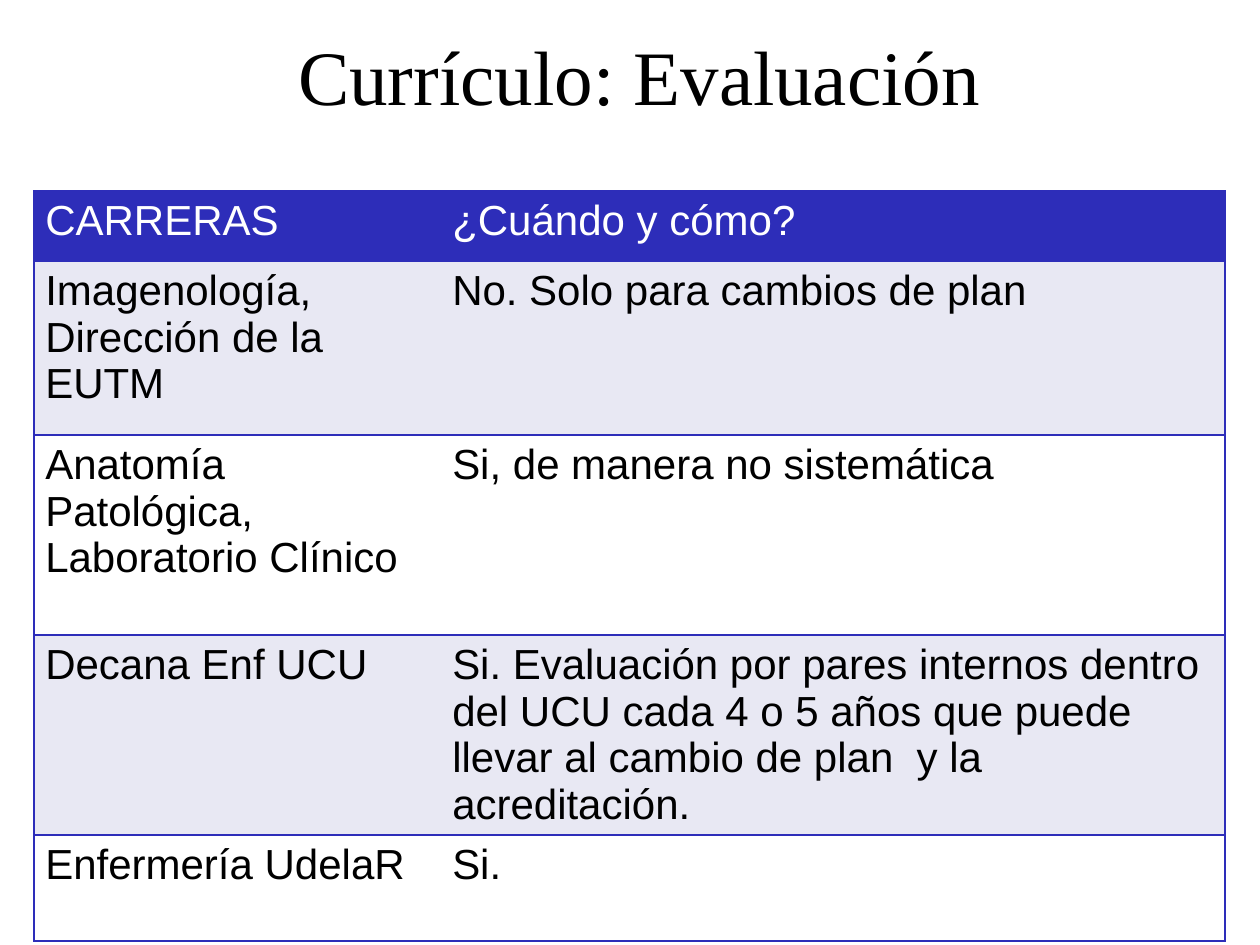
from dataclasses import dataclass

from lxml import etree
from pptx import Presentation
from pptx import util as u
from pptx.dml.color import RGBColor
from pptx.enum import text
from pptx.oxml.ns import qn


@dataclass(frozen=True)
class Theme:
    blue: str = "2D2DB9"
    band: str = "E8E8F3"
    white: str = "FFFFFF"
    black: str = "000000"
    title_font: str = "Times New Roman"
    body_font: str = "Arial"
    title_size: int = 44
    body_size: int = 24
    border: int = 1


def px(length):
    return u.Emu(round(length * 914400 / 126))


def format_font(font, name, size, color):
    for key, value in {"name": name, "size": u.Pt(size), "bold": False}.items():
        setattr(font, key, value)
    font.color.rgb = RGBColor.from_string(color)


theme = Theme()
presentation = Presentation()
presentation.slide_width, presentation.slide_height = px(1260), px(945)
slide = presentation.slides.add_slide(presentation.slide_layouts[5])

title = slide.shapes.title
for key, value in {"left": 104, "top": -4, "width": 1071, "height": 158}.items():
    setattr(title, key, px(value))
title.text_frame.vertical_anchor = text.MSO_ANCHOR.MIDDLE
paragraph = title.text_frame.paragraphs[0]
paragraph.alignment = text.PP_ALIGN.CENTER
run = paragraph.add_run()
run.text = "Currículo: Evaluación"
format_font(run.font, theme.title_font, theme.title_size, theme.black)

rows = [
    ("CARRERAS", "¿Cuándo y cómo?"),
    ("Imagenología, Dirección de la EUTM", "No. Solo para cambios de plan"),
    ("Anatomía Patológica, Laboratorio Clínico", "Si, de manera no sistemática"),
    ("Decana Enf UCU",
     "Si. Evaluación por pares internos dentro del UCU cada 4 o 5 años "
     "que puede llevar al cambio de plan  y la acreditación."),
    ("Enfermería UdelaR", "Si."),
]
column_widths = [407, 784]
row_heights = [70, 174, 200, 200, 106]

table = slide.shapes.add_table(
    len(rows), len(column_widths), px(34), px(191),
    px(sum(column_widths)), px(sum(row_heights))).table
for column, width in zip(table.columns, column_widths):
    column.width = px(width)
for row, height in zip(table.rows, row_heights):
    row.height = px(height)

for row_index, row in enumerate(rows):
    header = row_index == 0
    fill = theme.blue if header else (theme.white, theme.band)[row_index % 2]
    color = theme.white if header else theme.black
    for column_index, wording in enumerate(row):
        cell = table.cell(row_index, column_index)
        margins = {"margin_left": 0.09, "margin_right": 0.09,
                   "margin_top": 0.05, "margin_bottom": 0.05}
        for key, value in margins.items():
            setattr(cell, key, u.Inches(value))
        run = cell.text_frame.paragraphs[0].add_run()
        run.text = wording
        format_font(run.font, theme.body_font, theme.body_size, color)

        properties = cell._tc.get_or_add_tcPr()
        outer, inner = ("lnL", "lnR") if column_index == 0 else ("lnR", "lnL")
        for side in ("lnL", "lnR", "lnT", "lnB"):
            line = etree.SubElement(properties, qn(f"a:{side}"), w=str(u.Pt(theme.border)))
            if side == inner:
                etree.SubElement(line, qn("a:noFill"))
            else:
                solid = etree.SubElement(line, qn("a:solidFill"))
                etree.SubElement(solid, qn("a:srgbClr"), val=theme.blue)
        cell.fill.solid()
        cell.fill.fore_color.rgb = RGBColor.from_string(fill)

presentation.save("out.pptx")
